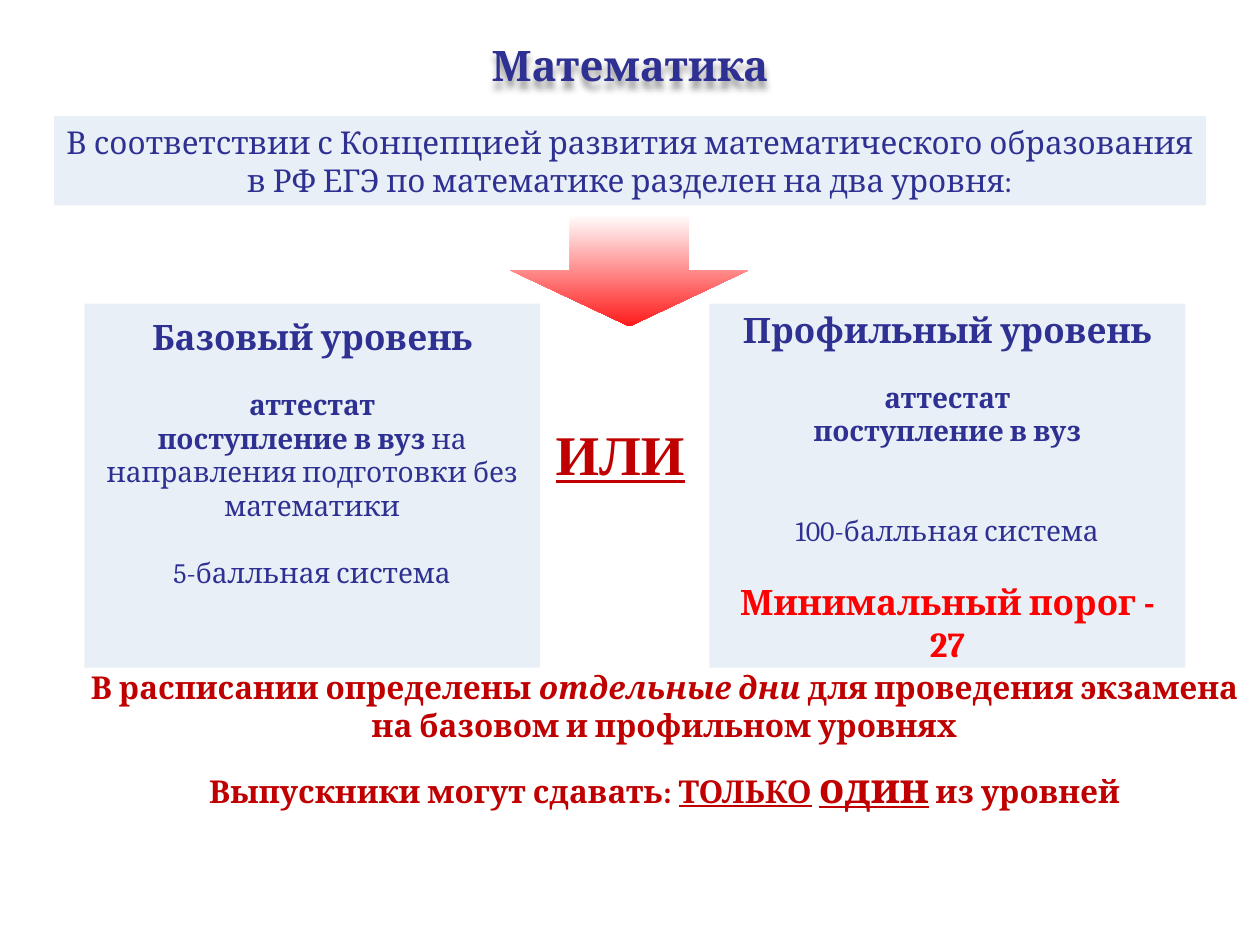
from lxml.etree import SubElement
from pptx import Presentation
from pptx.dml.color import RGBColor as RGB
from pptx.enum.shapes import MSO_SHAPE as SHAPE
from pptx.enum.text import MSO_ANCHOR as ANCHOR, MSO_AUTO_SIZE as AUTOSIZE, PP_ALIGN as ALIGN
from pptx.oxml.ns import qn
from pptx.util import Cm, Pt

THEME = {
    "navy": RGB(0x2E, 0x31, 0x92),
    "crimson": RGB(0xC0, 0x00, 0x00),
    "red": RGB(0xFF, 0x00, 0x00),
    "panel": RGB(0xB9, 0xCD, 0xE5),
    "panel_alpha": 31,
    "arrow": (RGB(0xFF, 0xFF, 0xFF), RGB(0xFF, 0x1A, 0x1A)),
    "font": "Cambria",
    "choice_font": "Times New Roman",
    "title": 24, "text": 18, "heading": 20, "detail": 16, "choice": 32,
}

BOLD, PLAIN = {"bold": True}, {"bold": False}
TITLE = [([("Математика", {})], "title", "navy", True, 0)]
INTRO = [([("В соответствии с Концепцией развития математического образования в РФ "
            "ЕГЭ по математике разделен на два уровня:", {})], "text", "navy", False, 0)]
CHOICE = [([("ИЛИ", {"underline": True})], "choice", "crimson", True, 0)]
BASIC = [
    ([("Базовый уровень", {})], "heading", "navy", True, 0),
    ([("аттестат", {})], "detail", "navy", True, 17),
    ([("поступление в вуз ", BOLD), ("на направления подготовки без математики", PLAIN)],
     "detail", "navy", None, 0),
    ([("5-балльная система", {})], "detail", "navy", False, 19),
]
PROFILE = [
    ([("Профильный уровень", {})], "heading", "navy", True, 0),
    ([("аттестат", {})], "detail", "navy", True, 17),
    ([("поступление в вуз", {})], "detail", "navy", True, 0),
    ([("100-балльная система", {})], "detail", "navy", False, 38),
    ([("Минимальный порог - 27", {})], "heading", "red", True, 19),
]
SCHEDULE = [
    ([("В расписании определены ", {}), ("отдельные дни ", {"italic": True}),
      ("для проведения экзамена на базовом и профильном уровнях", {})],
     "text", "crimson", True, 0),
    ([("Выпускники могут сдавать: ", {}), ("ТОЛЬКО", {"underline": True}), (" ", {}),
      ("один", {"underline": True, "size": Pt(THEME["title"])}), (" из уровней", {})],
     "text", "crimson", True, 10),
]

MARGIN, BAND_WIDTH = 1.09, 23.22
LEVEL_TOP, LEVEL_HEIGHT = 6.12, 7.34
LEVELS = [(BASIC, 1.7, 9.19, 0.25), (PROFILE, 14.3, 9.6, 0.1)]


def write(shape, paragraphs, anchor=ANCHOR.TOP, font=THEME["font"]):
    frame = shape.text_frame
    frame.word_wrap = True
    frame.auto_size = AUTOSIZE.NONE
    frame.vertical_anchor = anchor
    for index, (runs, size, color, bold, gap) in enumerate(paragraphs):
        paragraph = frame.add_paragraph() if index else frame.paragraphs[0]
        paragraph.alignment = ALIGN.CENTER
        if gap:
            paragraph.space_before = Pt(gap)
        paragraph.font.name = font
        paragraph.font.size = Pt(THEME[size])
        paragraph.font.color.rgb = THEME[color]
        paragraph.font.bold = bold
        for words, changes in runs:
            run = paragraph.add_run()
            run.text = words
            for attribute, value in changes.items():
                setattr(run.font, attribute, value)


def add_plain_shape(slide, kind, *box):
    shape = slide.shapes.add_shape(kind, *map(Cm, box))
    shape.shadow.inherit = False
    shape.line.fill.background()
    return shape


def add_panel(slide, *box):
    panel = add_plain_shape(slide, SHAPE.RECTANGLE, *box)
    panel.fill.solid()
    panel.fill.fore_color.rgb = THEME["panel"]
    color = panel._element.spPr.find(qn("a:solidFill"))[0]
    SubElement(color, qn("a:alpha"), val=str(THEME["panel_alpha"] * 1000))
    return panel


def add_text(slide, paragraphs, *box, **options):
    write(slide.shapes.add_textbox(*map(Cm, box)), paragraphs, **options)


def add_title(slide):
    title = slide.shapes.title
    title.left, title.top, title.width, title.height = map(Cm, (MARGIN, 0.66, BAND_WIDTH, 1.27))
    write(title, TITLE)
    effects = SubElement(title._element.spPr, qn("a:effectLst"))
    shadow = SubElement(effects, qn("a:outerShdw"), blurRad="50800", dist="50800", dir="5400000")
    color = SubElement(shadow, qn("a:srgbClr"), val="000000")
    SubElement(color, qn("a:alpha"), val="40000")


def main():
    deck = Presentation()
    deck.slide_width, deck.slide_height = Cm(25.4), Cm(19.05)
    slide = deck.slides.add_slide(deck.slide_layouts[5])

    add_title(slide)
    add_text(slide, SCHEDULE, 1.4, 13.34, 24, 2.92)
    for level, left, width, inset in LEVELS:
        panel = add_panel(slide, left, LEVEL_TOP, width, LEVEL_HEIGHT)
        write(panel, level)
        panel.text_frame.margin_top = Cm(inset)

    arrow = add_plain_shape(slide, SHAPE.DOWN_ARROW, 10.29, 4.32, 4.8, 2.26)
    arrow.fill.gradient()
    arrow.fill.gradient_angle = 270
    for stop, color in zip(arrow.fill.gradient_stops, THEME["arrow"]):
        stop.color.rgb = color

    write(add_panel(slide, MARGIN, 2.34, BAND_WIDTH, 1.8), INTRO, ANCHOR.MIDDLE)
    add_text(slide, CHOICE, 10.9, 8.33, 3.2, 1.63, font=THEME["choice_font"])
    deck.save("out.pptx")


if __name__ == "__main__":
    main()
